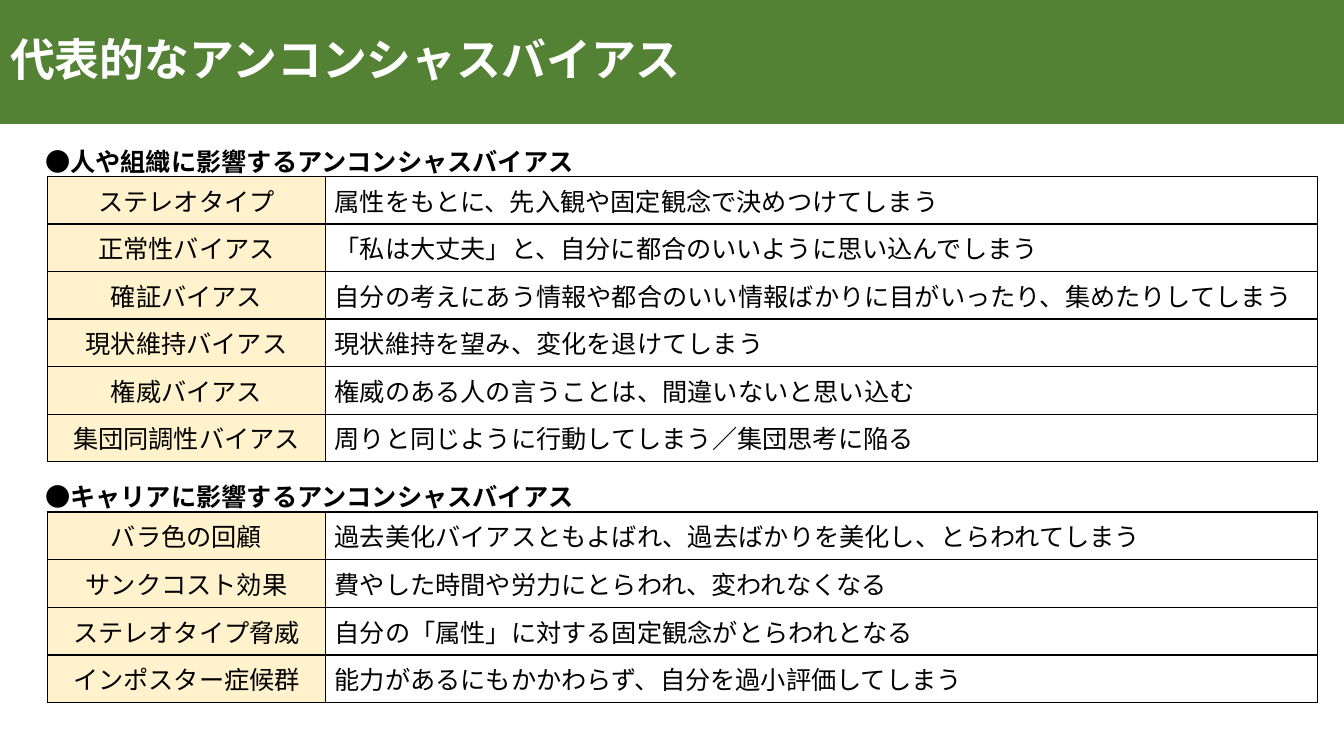
from lxml import etree
from pptx import Presentation
from pptx.dml.color import RGBColor
from pptx.enum.text import MSO_ANCHOR, MSO_AUTO_SIZE, PP_ALIGN
from pptx.oxml.ns import qn
from pptx.util import Inches, Pt

MIDDLE = MSO_ANCHOR.MIDDLE
LEFT, CENTER = PP_ALIGN.LEFT, PP_ALIGN.CENTER
GROW = MSO_AUTO_SIZE.SHAPE_TO_FIT_TEXT

# Content
TITLE = "代表的なアンコンシャスバイアス"
SECTIONS = [
    # heading, heading top, table height, rows
    ("●人や組織に影響するアンコンシャスバイアス", 1.4, 2.83, [
        ("ステレオタイプ", "属性をもとに、先入観や固定観念で決めつけてしまう"),
        ("正常性バイアス", "「私は大丈夫」と、自分に都合のいいように思い込んでしまう"),
        ("確証バイアス", "自分の考えにあう情報や都合のいい情報ばかりに目がいったり、集めたりしてしまう"),
        ("現状維持バイアス", "現状維持を望み、変化を退けてしまう"),
        ("権威バイアス", "権威のある人の言うことは、間違いないと思い込む"),
        ("集団同調性バイアス", "周りと同じように行動してしまう／集団思考に陥る"),
    ]),
    ("●キャリアに影響するアンコンシャスバイアス", 4.73, 1.89, [
        ("バラ色の回顧", "過去美化バイアスともよばれ、過去ばかりを美化し、とらわれてしまう"),
        ("サンクコスト効果", "費やした時間や労力にとらわれ、変われなくなる"),
        ("ステレオタイプ脅威", "自分の「属性」に対する固定観念がとらわれとなる"),
        ("インポスター症候群", "能力があるにもかかわらず、自分を過小評価してしまう"),
    ]),
]

# Look and layout
JAPANESE, LATIN = "Noto Sans CJK JP", "Lato"
GREEN, CREAM, WHITE, BLACK = "548235", "FFF2CC", "FFFFFF", "000000"
SLIDE_WIDTH, SLIDE_HEIGHT, BANNER_HEIGHT = 13.33, 7.5, 1.23
HEADING_LEFT, HEADING_WIDTH, HEADING_HEIGHT = 0.35, 5.5, 0.4
TABLE_LEFT, TABLE_OFFSET = 0.47, 0.35
COLUMN_WIDTHS = (2.76, 9.84)
COLUMN_STYLES = ((CREAM, CENTER), (WHITE, LEFT))
CELL_MARGIN = 0.09


def rgb(color):
    return RGBColor.from_string(color)


def format_text(text_frame, size, color, bold=False, latin=JAPANESE, align=LEFT):
    paragraph = text_frame.paragraphs[0]
    paragraph.alignment = align
    for run in paragraph.runs:
        run.font.size = Pt(size)
        run.font.bold = bold
        run.font.color.rgb = rgb(color)
        run.font.name = latin
        east_asian = etree.SubElement(run.font._element, qn("a:ea"))
        east_asian.set("typeface", JAPANESE)


def add_borders(cell, color, width):
    properties = cell._tc.get_or_add_tcPr()
    for side in ("a:lnL", "a:lnR", "a:lnT", "a:lnB"):
        line = etree.SubElement(properties, qn(side), w=str(Pt(width)))
        fill = etree.SubElement(line, qn("a:solidFill"))
        etree.SubElement(fill, qn("a:srgbClr"), val=color)


def add_title(slide):
    title = slide.shapes.title
    title.left, title.top = Inches(0), Inches(0)
    title.width, title.height = Inches(SLIDE_WIDTH), Inches(BANNER_HEIGHT)
    title.fill.solid()
    title.fill.fore_color.rgb = rgb(GREEN)
    title.text_frame.text = TITLE
    title.text_frame.vertical_anchor = MIDDLE
    title.text_frame.paragraphs[0].line_spacing = 0.9
    format_text(title.text_frame, 32, WHITE, bold=True)


def add_heading(slide, heading, top):
    box = slide.shapes.add_textbox(Inches(HEADING_LEFT), Inches(top),
                                   Inches(HEADING_WIDTH), Inches(HEADING_HEIGHT))
    box.text_frame.text = heading
    box.text_frame.word_wrap = False
    box.text_frame.auto_size = GROW
    format_text(box.text_frame, 18, BLACK, bold=True, latin=LATIN)


def add_bias_table(slide, rows, top, height):
    table = slide.shapes.add_table(
        len(rows), len(COLUMN_WIDTHS), Inches(TABLE_LEFT), Inches(top),
        Inches(sum(COLUMN_WIDTHS)), Inches(height)).table
    table.first_row = False
    table.horz_banding = False
    for column, width in zip(table.columns, COLUMN_WIDTHS):
        column.width = Inches(width)
    for row, texts in zip(table.rows, rows):
        for cell, text, (fill, align) in zip(row.cells, texts, COLUMN_STYLES):
            cell.text_frame.text = text
            cell.vertical_anchor = MIDDLE
            cell.margin_left = cell.margin_right = Inches(CELL_MARGIN)
            add_borders(cell, BLACK, 1)
            cell.fill.solid()
            cell.fill.fore_color.rgb = rgb(fill)
            format_text(cell.text_frame, 18, BLACK, align=align)


def main():
    presentation = Presentation()
    presentation.slide_width = Inches(SLIDE_WIDTH)
    presentation.slide_height = Inches(SLIDE_HEIGHT)
    slide = presentation.slides.add_slide(presentation.slide_layouts[5])

    # Title banner
    add_title(slide)

    # Each section: a table with its heading just above
    for heading, top, table_height, rows in SECTIONS:
        add_bias_table(slide, rows, top + TABLE_OFFSET, table_height)
        add_heading(slide, heading, top)

    presentation.save("out.pptx")


if __name__ == "__main__":
    main()
